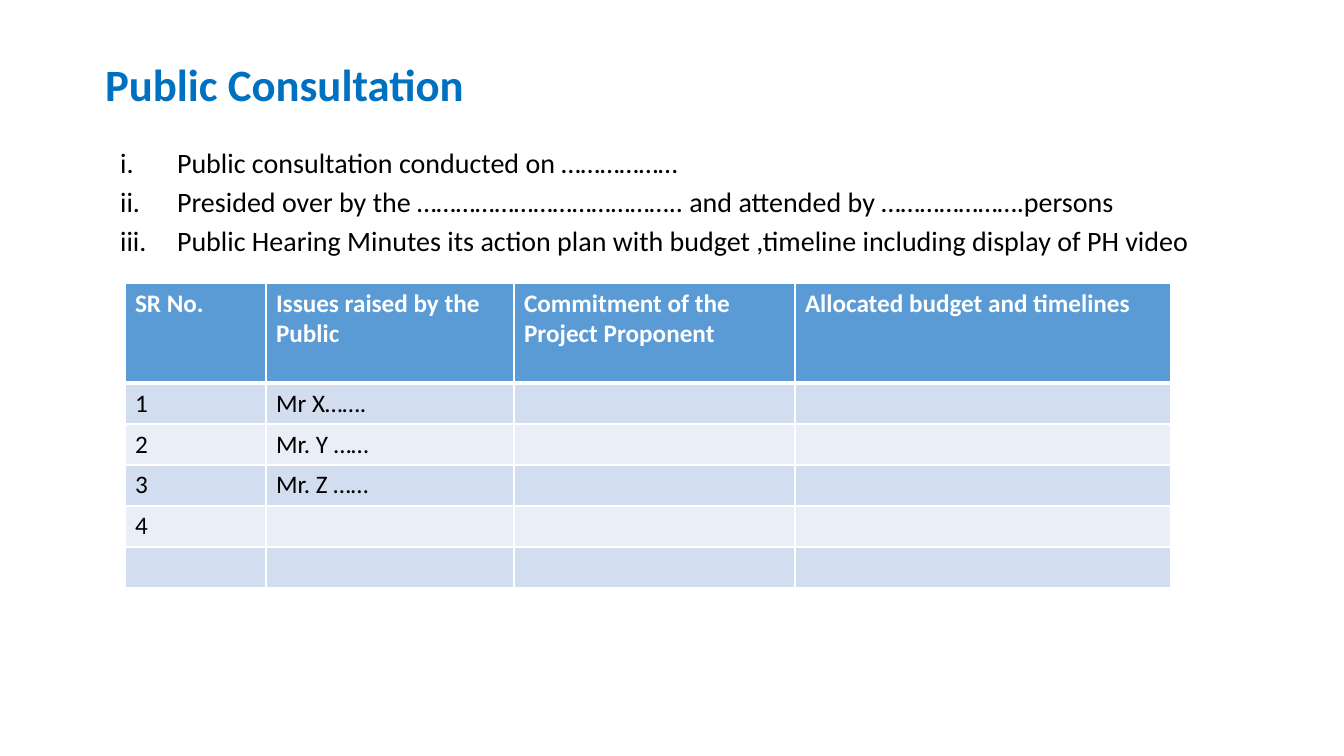
from lxml.etree import SubElement
from pptx import Presentation
from pptx.dml.color import RGBColor
from pptx.enum.text import MSO_ANCHOR as Anchor, MSO_AUTO_SIZE as AutoSize, PP_ALIGN as Align
from pptx.oxml.ns import qn
from pptx.util import Emu, Pt

EMU_PER_PX = 914400 / 100.8
FONT = "Calibri"
COLORS = {
    "title": "0070C0",
    "text": "000000",
    "white": "FFFFFF",
    "header": "5B9BD5",
    "odd_row": "D2DEEF",
    "even_row": "EAEFF7",
}
POINTS = [
    "Public consultation conducted on ………………",
    "Presided over by the ………………………………….. and attended by ………………….persons",
    "Public Hearing Minutes its action plan with budget ,timeline including display of PH video",
]
ISSUES = [
    ["SR No.", "Issues raised by the Public", "Commitment of the Project Proponent",
     "Allocated budget and timelines"],
    ["1", "Mr X…….", "", ""],
    ["2", "Mr. Y ……", "", ""],
    ["3", "Mr. Z ……", "", ""],
    ["4", "", "", ""],
    ["", "", "", ""],
]
COLUMN_WIDTHS = [141, 248, 281, 376]
HEADER_HEIGHT, ROW_HEIGHT = 100, 41


def px(length):
    return Emu(round(length * EMU_PER_PX))


def color(name):
    return RGBColor.from_string(COLORS[name])


def place(shape, left, top, width, height):
    shape.left, shape.top = px(left), px(top)
    shape.width, shape.height = px(width), px(height)


def format_font(font, size, color_name, bold=False):
    font.name, font.size, font.bold = FONT, Pt(size), bold
    font.color.rgb = color(color_name)


def format_runs(paragraph, size, color_name, bold=False):
    for run in paragraph.runs:
        format_font(run.font, size, color_name, bold)


def fill_title(title, text):
    place(title, 95, 51, 974, 65)
    frame = title.text_frame
    frame.text = text
    frame.auto_size = AutoSize.NONE
    frame.vertical_anchor = Anchor.MIDDLE
    paragraph = frame.paragraphs[0]
    paragraph.alignment = Align.LEFT
    format_runs(paragraph, 32, "title", True)


def number_paragraph(paragraph, indent):
    properties = paragraph._p.get_or_add_pPr()
    properties.set("marL", str(px(indent)))
    properties.set("indent", str(-px(indent)))
    SubElement(properties, qn("a:buFont"), typeface=FONT)
    SubElement(properties, qn("a:buAutoNum"), type="romanLcPeriod")


def fill_list(body, points):
    place(body, 110, 140, 1139, 483)
    frame = body.text_frame
    frame.text = "\n".join(points)
    frame.auto_size = AutoSize.NONE
    for paragraph in frame.paragraphs:
        paragraph.alignment = Align.JUSTIFY
        number_paragraph(paragraph, 57)
        format_runs(paragraph, 20, "text")


def add_borders(cell, bottom_width):
    properties = cell._tc.get_or_add_tcPr()
    for side, width in (("L", 1), ("R", 1), ("T", 1), ("B", bottom_width)):
        line = SubElement(properties, qn(f"a:ln{side}"), w=str(Pt(width)))
        fill = SubElement(line, qn("a:solidFill"))
        SubElement(fill, qn("a:srgbClr"), val=COLORS["white"])


def format_cell(cell, text, row_index):
    is_header = row_index == 0
    add_borders(cell, 3 if is_header else 1)
    cell.fill.solid()
    row_color = "odd_row" if row_index % 2 else "even_row"
    cell.fill.fore_color.rgb = color("header" if is_header else row_color)
    cell.text_frame.text = text
    paragraph = cell.text_frame.paragraphs[0]
    format_runs(paragraph, 18, "white" if is_header else "text", is_header)


def add_issue_table(slide, left, top):
    row_heights = [HEADER_HEIGHT] + [ROW_HEIGHT] * (len(ISSUES) - 1)
    frame = slide.shapes.add_table(
        len(ISSUES), len(COLUMN_WIDTHS), px(left), px(top),
        px(sum(COLUMN_WIDTHS)), px(sum(row_heights)))
    table = frame.table
    for column, width in zip(table.columns, COLUMN_WIDTHS):
        column.width = px(width)
    for row_index, (row, height) in enumerate(zip(table.rows, row_heights)):
        row.height = px(height)
        for cell, text in zip(row.cells, ISSUES[row_index]):
            format_cell(cell, text, row_index)


def main():
    presentation = Presentation()
    presentation.slide_width, presentation.slide_height = px(1344), px(756)
    slide = presentation.slides.add_slide(presentation.slide_layouts[1])
    fill_title(slide.shapes.title, "Public Consultation")
    fill_list(slide.placeholders[1], POINTS)
    add_issue_table(slide, 125, 283)
    presentation.save("out.pptx")


if __name__ == "__main__":
    main()
